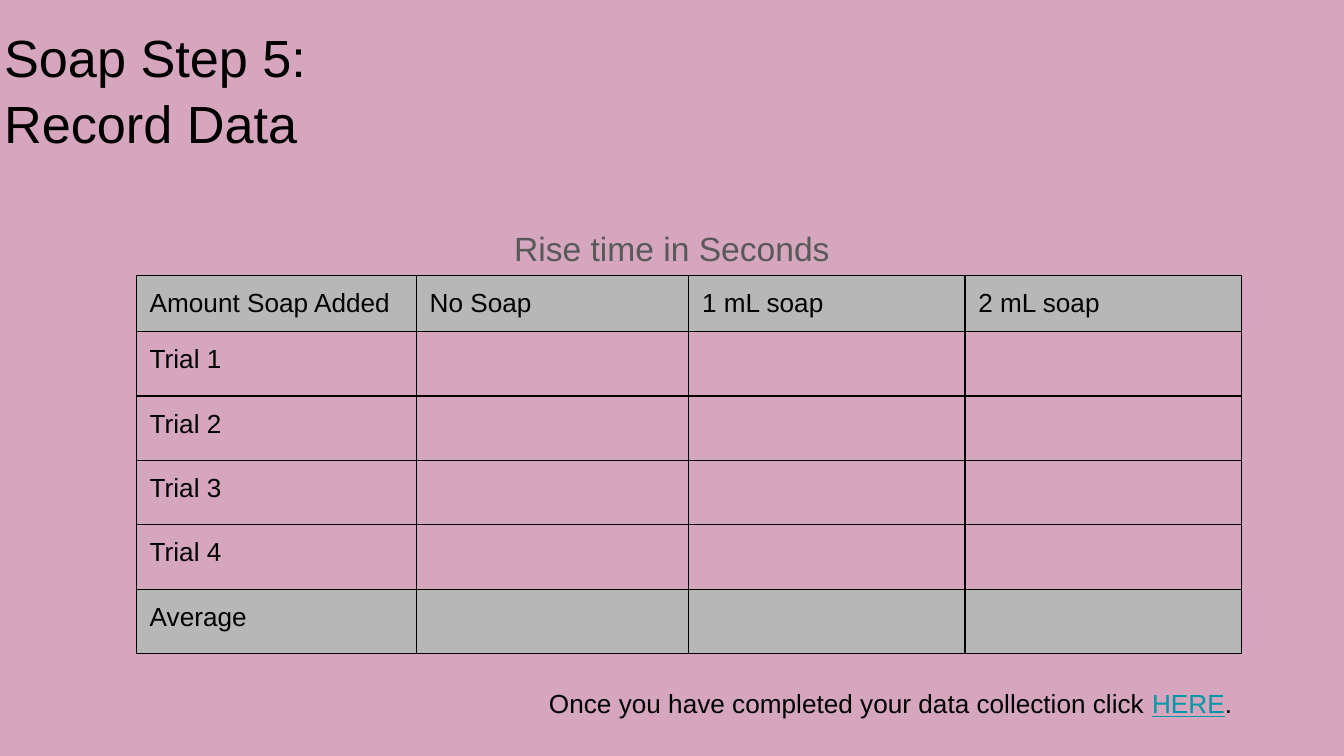
from lxml.etree import SubElement
from pptx import Presentation
from pptx.dml.color import RGBColor
from pptx.enum.text import MSO_ANCHOR, MSO_AUTO_SIZE, PP_ALIGN
from pptx.oxml.ns import qn
from pptx.util import Pt

HUES = {"back": "D5A6BD", "band": "B7B7B7", "ink": "000000",
        "gray": "595959", "link": "0097A7"}
TITLE = "Soap Step 5:\nRecord Data"
BODY = "Rise time in Seconds"
HEAD = ["Amount Soap Added", "No Soap", "1 mL soap", "2 mL soap"]
SIDE = ["Trial 1", "Trial 2", "Trial 3", "Trial 4", "Average"]
NOTE = [("Once you have completed your data collection click ", "ink"),
        ("HERE", "link"), (".", "ink")]
COLS = [150, 146, 148, 148]
ROWS = [30] + [34.5] * len(SIDE)
FONT = "Arial"
PAD = 7.2


def tint(hue):
    return RGBColor.from_string(HUES[hue])


def style(run, size, hue):
    run.font.name = FONT
    run.font.size = Pt(size)
    run.font.color.rgb = tint(hue)


def place(shape, left, top, width, height):
    shape.left, shape.top = Pt(left), Pt(top)
    shape.width, shape.height = Pt(width), Pt(height)


def inset(box, top=PAD):
    box.margin_left = box.margin_right = box.margin_bottom = Pt(PAD)
    box.margin_top = Pt(top)


def fill_holder(shape, text, top, size, hue, align, lead):
    frame = shape.text_frame
    frame.text = text
    frame.word_wrap = True
    frame.auto_size = MSO_AUTO_SIZE.NONE
    frame.vertical_anchor = MSO_ANCHOR.TOP
    inset(frame, top)
    for para in frame.paragraphs:
        para.alignment = align
        para.line_spacing = lead
        para.space_before = para.space_after = Pt(0)
        props = para._p.get_or_add_pPr()
        props.set("marL", "0")
        props.set("indent", "0")
        SubElement(props, qn("a:buNone"))
        for run in para.runs:
            style(run, size, hue)


def edge(cell):
    props = cell._tc.get_or_add_tcPr()
    for spot, side in enumerate(("L", "R", "T", "B")):
        line = props.makeelement(qn(f"a:ln{side}"), {"w": str(Pt(0.75))})
        paint = SubElement(line, qn("a:solidFill"))
        SubElement(paint, qn("a:srgbClr"), val=HUES["ink"])
        props.insert(spot, line)


def add_grid(slide):
    shape = slide.shapes.add_table(len(ROWS), len(COLS), Pt(73), Pt(147.5),
                                   Pt(sum(COLS)), Pt(sum(ROWS)))
    grid = shape.table
    grid.first_row = grid.horz_banding = False
    for col, width in zip(grid.columns, COLS):
        col.width = Pt(width)
    for row, height in zip(grid.rows, ROWS):
        row.height = Pt(height)
    texts = [HEAD] + [[name] + [""] * (len(COLS) - 1) for name in SIDE]
    for r, line in enumerate(texts):
        for c, text in enumerate(line):
            cell = grid.cell(r, c)
            if text:
                cell.text = text
                inset(cell)
                style(cell.text_frame.paragraphs[0].runs[0], 14, "ink")
            if r in (0, len(SIDE)):
                cell.fill.solid()
                cell.fill.fore_color.rgb = tint("band")
            else:
                cell.fill.background()
            edge(cell)


def add_note(slide):
    box = slide.shapes.add_textbox(Pt(287), Pt(361), Pt(383), Pt(31.5))
    frame = box.text_frame
    frame.word_wrap = True
    frame.auto_size = MSO_AUTO_SIZE.SHAPE_TO_FIT_TEXT
    inset(frame)
    for text, hue in NOTE:
        run = frame.paragraphs[0].add_run()
        run.text = text
        style(run, 14, hue)
        run.font.underline = hue == "link"


def main():
    deck = Presentation()
    deck.slide_width, deck.slide_height = Pt(720), Pt(405)
    slide = deck.slides.add_slide(deck.slide_layouts[1])
    slide.background.fill.solid()
    slide.background.fill.fore_color.rgb = tint("back")
    title, body = slide.placeholders
    place(title, -5, 3.5, 700.5, 76.5)
    fill_holder(title, TITLE, 8.5, 28, "ink", PP_ALIGN.LEFT, 1.05)
    place(body, 24.5, 72, 671, 314)
    fill_holder(body, BODY, 47, 18, "gray", PP_ALIGN.CENTER, 1.15)
    add_grid(slide)
    add_note(slide)
    deck.save("out.pptx")


if __name__ == "__main__":
    main()
